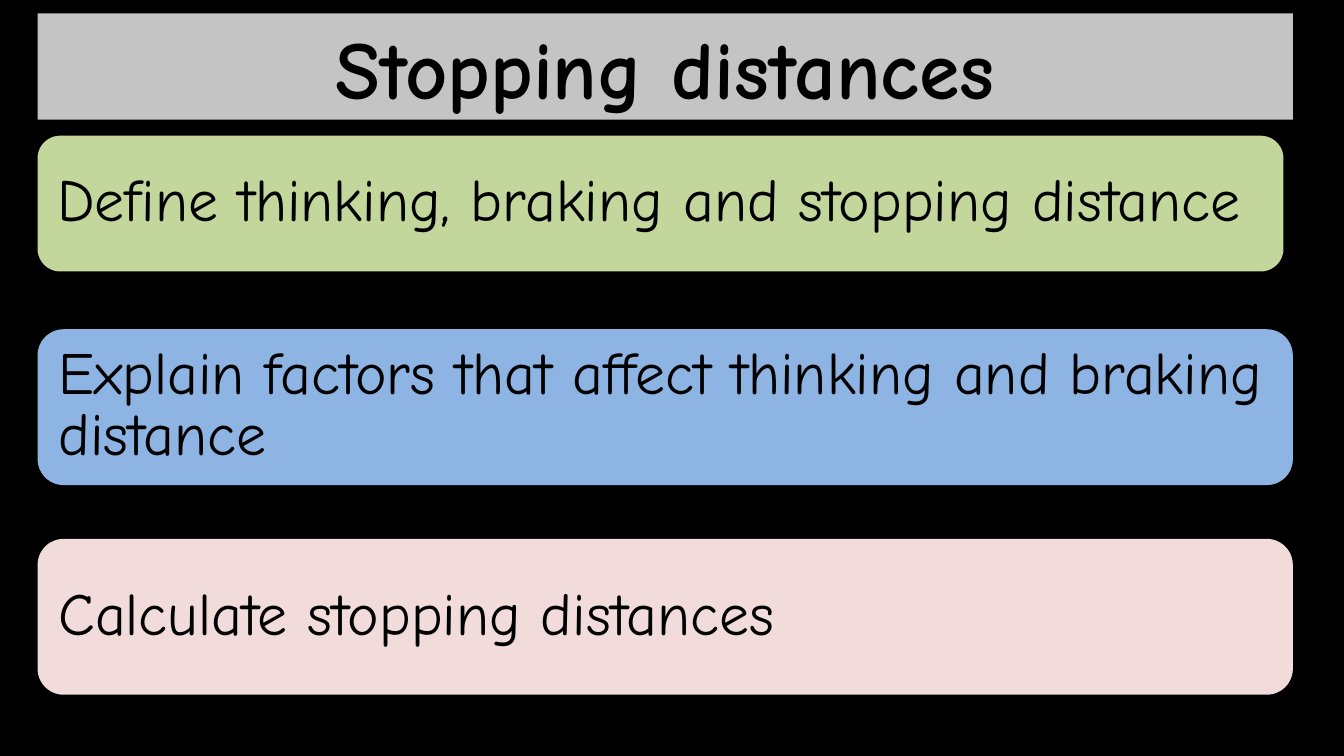
from dataclasses import dataclass
from lxml.etree import SubElement
from pptx import Presentation
from pptx.dml.color import RGBColor
from pptx.enum.shapes import MSO_SHAPE
from pptx.enum.text import MSO_ANCHOR, MSO_AUTO_SIZE, PP_ALIGN
from pptx.oxml.ns import qn
from pptx.util import Inches, Pt

LEFT = 0.28
WIDTH = 9.34
# A 16:9 page
PAGE = {"slide_width": Inches(10), "slide_height": Inches(10) * 9 // 16}
FRAME = {"word_wrap": True, "auto_size": MSO_AUTO_SIZE.NONE,
         "vertical_anchor": MSO_ANCHOR.MIDDLE}
HEAD_FONT = {"name": "Comic Neue", "size": Pt(44), "bold": True}
GOAL_FONT = {"name": "Comic Neue", "size": Pt(32), "bold": False}
HEAD_PARA = {"alignment": PP_ALIGN.CENTER}
GOAL_PARA = {"alignment": PP_ALIGN.LEFT, "line_spacing": 0.85,
             "space_after": Pt(6.4)}


@dataclass
class Goal:
    text: str
    top: float
    height: float
    fill: str
    width: float = WIDTH


GOALS = [
    Goal("Define thinking, braking and stopping distance", 1.01, 1.01, "C3D69B", 9.27),
    Goal("Explain factors that affect thinking and braking distance", 2.45, 1.16, "8EB4E3"),
    Goal("Calculate stopping distances", 4.01, 1.16, "F2DCDB"),
]


def paint(fill, color: str) -> None:
    fill.solid()
    fill.fore_color.rgb = RGBColor.from_string(color)


def apply(target, values: dict) -> None:
    for key, value in values.items():
        setattr(target, key, value)


def write(shape, text: str, para: dict, font: dict) -> None:
    frame = shape.text_frame
    apply(frame, FRAME)
    line = frame.paragraphs[0]
    apply(line, para)
    run = line.add_run()
    run.text = text
    apply(run.font, font)
    paint(run.font.fill, "000000")


def add_head(slide, text: str) -> None:
    head = slide.shapes.title
    apply(head, {"left": Inches(LEFT), "top": Inches(0.1),
                 "width": Inches(WIDTH), "height": Inches(0.79)})
    paint(head.fill, "FFFFFF")
    # Let the black background show through the white band
    color = head.element.spPr.find(qn("a:solidFill"))[0]
    SubElement(color, qn("a:alpha"), val="77000")
    write(head, text, HEAD_PARA, HEAD_FONT)


def add_goal(slide, goal: Goal) -> None:
    card = slide.shapes.add_shape(
        MSO_SHAPE.ROUNDED_RECTANGLE, Inches(LEFT), Inches(goal.top),
        Inches(goal.width), Inches(goal.height))
    card.shadow.inherit = False
    card.line.fill.background()
    paint(card.fill, goal.fill)
    write(card, goal.text, GOAL_PARA, GOAL_FONT)


def main() -> None:
    deck = Presentation()
    apply(deck, PAGE)
    # The "Title Only" layout
    slide = deck.slides.add_slide(deck.slide_layouts[5])
    paint(slide.background.fill, "000000")

    # Title band, then the learning goals
    add_head(slide, "Stopping distances")
    for goal in GOALS:
        add_goal(slide, goal)
    deck.save("out.pptx")


if __name__ == "__main__":
    main()
